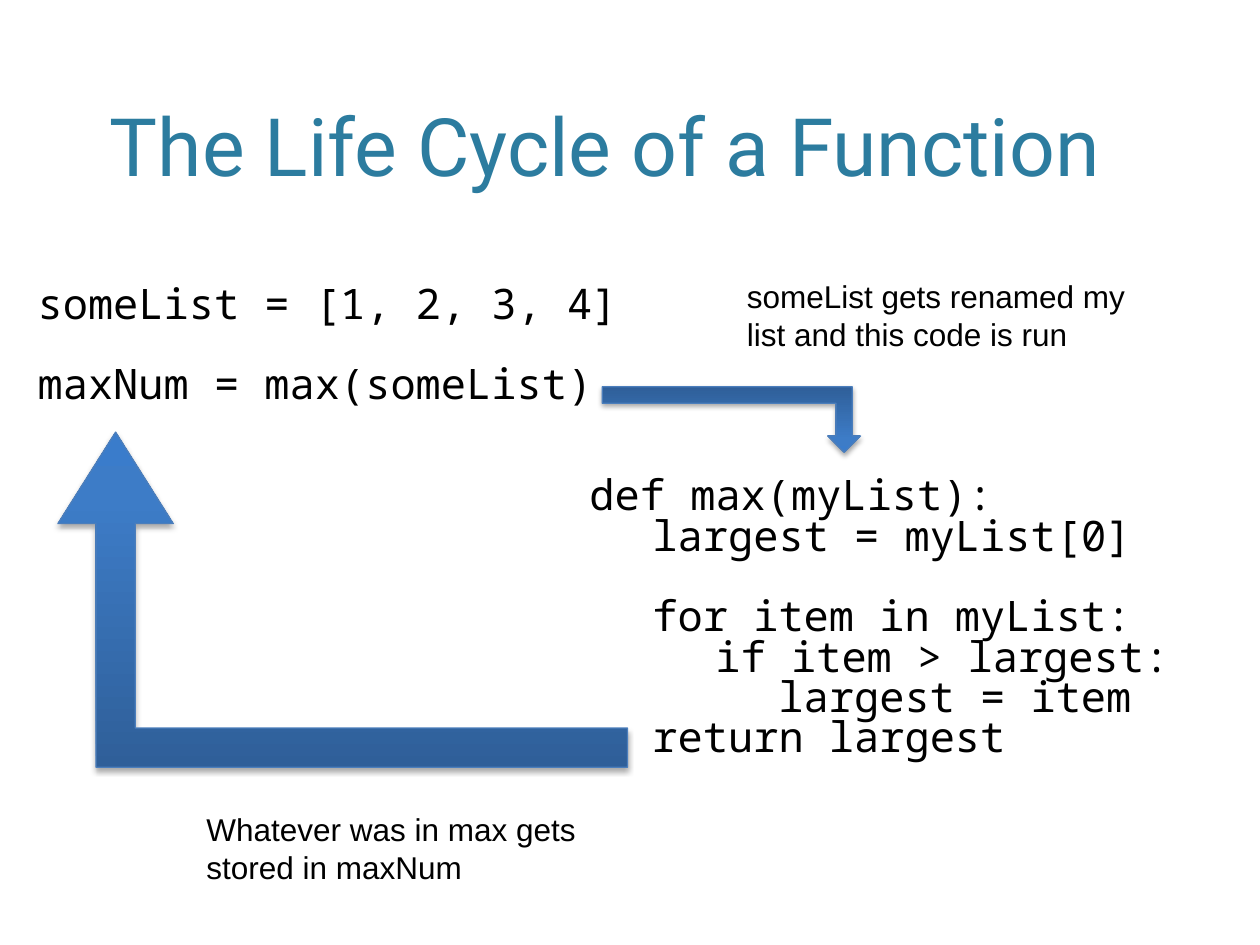
from copy import deepcopy

from lxml.etree import SubElement
from pptx import Presentation
from pptx.dml.color import RGBColor
from pptx.enum.shapes import MSO_SHAPE
from pptx.enum.text import MSO_ANCHOR, PP_ALIGN
from pptx.oxml.ns import qn
from pptx.util import Inches, Pt


def colour(value):
    return RGBColor.from_string(value)


class Slide:
    title_font, code_font, note_font = "Roboto", "Noto Sans Mono", "Arial"
    title_colour, ink, outline = "2C7C9F", "000000", "4B7EBC"
    gradient = ((0, "2F5F99"), (0.8, "3D7CC7"), (1, "3A7CCB"))
    tab_step = 0.5
    blank_line = 23

    def __init__(self, page):
        self.page = page

    def frame(self, place):
        box = self.page.shapes.add_textbox(*map(Inches, place))
        box.text_frame.word_wrap = True
        return box.text_frame

    def add_span(self, para, text, size, font, ink):
        span = para.add_run()
        span.text = text
        span.font.size = Pt(size)
        span.font.name = font
        span.font.color.rgb = colour(ink)

    def title(self, place, text):
        frame = self.frame(place)
        frame.vertical_anchor = MSO_ANCHOR.BOTTOM
        para = frame.paragraphs[0]
        para.alignment = PP_ALIGN.CENTER
        self.add_span(para, text, 46, self.title_font, self.title_colour)

    def note(self, place, text):
        para = self.frame(place).paragraphs[0]
        self.add_span(para, text, 18, self.note_font, self.ink)

    def code(self, place, groups):
        frame = self.frame(place)
        para = frame.paragraphs[0]
        for group_index, group in enumerate(groups):
            for line_index, line in enumerate(group):
                if group_index or line_index:
                    para = frame.add_paragraph()
                starts_group = group_index and not line_index
                para.line_spacing = 0.8
                para.space_before = Pt(self.blank_line if starts_group else 0)
                self.tabs(para, line.count("\t"))
                self.add_span(para, line, 24, self.code_font, self.ink)

    def tabs(self, para, count):
        if not count:
            return
        stops = SubElement(para._p.get_or_add_pPr(), qn("a:tabLst"))
        for number in range(1, count + 1):
            position = Inches(self.tab_step * number)
            SubElement(stops, qn("a:tab"), pos=str(position), algn="l")

    def bent_arrow(self, place, flip, adjustments=()):
        arrow = self.page.shapes.add_shape(MSO_SHAPE.BENT_UP_ARROW, *map(Inches, place))
        for index, value in enumerate(adjustments):
            arrow.adjustments[index] = value
        properties = arrow.element.spPr
        properties.find(qn("a:xfrm")).set(flip, "1")
        arrow.fill.gradient()
        arrow.fill.gradient_angle = 90
        stops = properties.find(f".//{qn('a:gsLst')}")
        stops.append(deepcopy(stops[-1]))
        for stop, (position, value) in zip(arrow.fill.gradient_stops, self.gradient):
            stop.position = position
            stop.color.rgb = colour(value)
        arrow.line.color.rgb = colour(self.outline)
        arrow.line.width = Pt(0.75)
        arrow.shadow.inherit = False
        shadow = SubElement(
            properties.find(qn("a:effectLst")), qn("a:outerShdw"),
            blurRad=str(Pt(3.1)), dist=str(Pt(1.8)), dir="5400000", rotWithShape="0",
        )
        shade = SubElement(shadow, qn("a:srgbClr"), val=self.ink)
        SubElement(shade, qn("a:alpha"), val="35000")


def main():
    deck = Presentation()
    deck.slide_width, deck.slide_height = Inches(10), Inches(7.5)
    slide = Slide(deck.slides.add_slide(deck.slide_layouts[6]))

    slide.title((0.2, 0.12, 9.2, 1.46), "The Life Cycle of a Function")
    slide.code((0.2, 2.23, 5.12, 4.11), [
        ["someList = [1, 2, 3, 4]"],
        ["maxNum = max(someList)"],
    ])
    slide.code((4.58, 3.75, 4.92, 2.63), [
        ["def max(myList):", "\tlargest = myList[0]"],
        [
            "\tfor item in myList:",
            "\t\tif item > largest:",
            "\t\t\tlargest = item",
            "\treturn largest",
        ],
    ])
    slide.bent_arrow((4.78, 3.07, 2.05, 0.52), "flipV")
    slide.note((5.83, 2.15, 3.56, 0.71), "someList gets renamed my list and this code is run")
    slide.bent_arrow((0.46, 3.43, 4.52, 2.66), "flipH", (0.117, 0.172, 0.273))
    slide.note((1.54, 6.38, 3.44, 0.71), "Whatever was in max gets stored in maxNum")

    deck.save("out.pptx")


if __name__ == "__main__":
    main()
